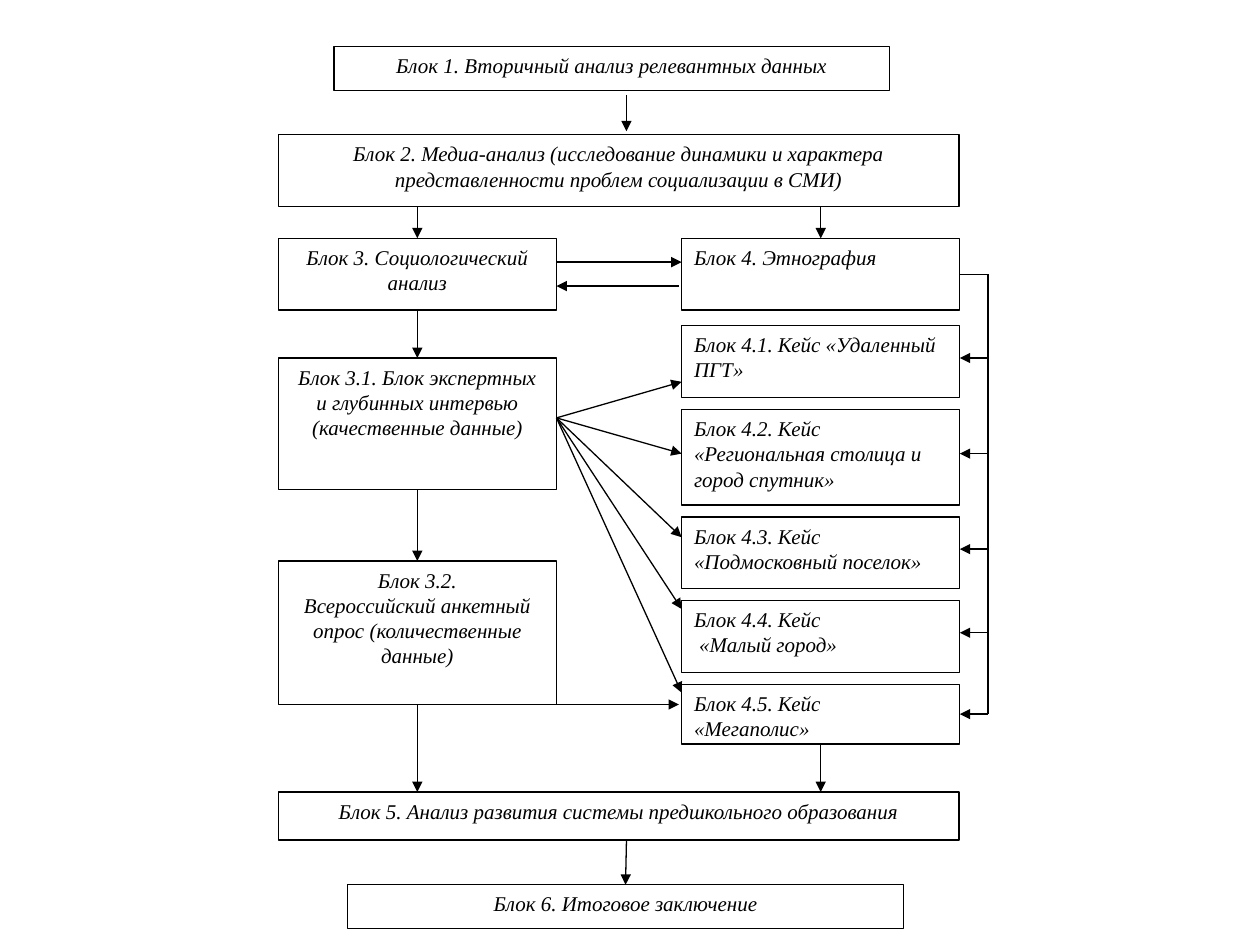
from lxml import etree
from pptx import Presentation
from pptx import util as u
from pptx.dml import color
from pptx.enum import shapes, text as t
from pptx.oxml import ns

COLORS = {"ink": "000000", "paper": "FFFFFF"}
FONT = "Times New Roman"
LEFT, RIGHT, COLUMN, FULL = 159, 389.5, 159, 389
EDGE, BUS = RIGHT + COLUMN, 564.5
LEFT_MID, RIGHT_MID, CENTER = LEFT + COLUMN / 2, RIGHT + COLUMN / 2, 358
TOP_SIDE, LEFT_SIDE, BOTTOM_SIDE, RIGHT_SIDE = range(4)

BLOCKS = {
    "1": ("Блок 1. Вторичный анализ релевантных данных", 190.8, 26.6, 317.5, 25.2),
    "2": ("Блок 2. Медиа-анализ (исследование динамики и характера "
          "представленности проблем социализации в СМИ)", LEFT, 77, FULL, 41),
    "3": ("Блок 3. Социологический анализ", LEFT, 136.2, COLUMN, 41),
    "3.1": ("Блок 3.1. Блок экспертных и глубинных интервью (качественные данные)",
            LEFT, 204.6, COLUMN, 75),
    "3.2": ("Блок 3.2.\nВсероссийский анкетный опрос (количественные данные)",
            LEFT, 320.6, COLUMN, 82),
    "4": ("Блок 4. Этнография", RIGHT, 136.2, COLUMN, 41),
    "4.1": ("Блок 4.1. Кейс «Удаленный ПГТ»", RIGHT, 186, COLUMN, 41),
    "4.2": ("Блок 4.2. Кейс «Региональная столица и город спутник»",
            RIGHT, 234, COLUMN, 54.6),
    "4.3": ("Блок 4.3. Кейс «Подмосковный поселок»", RIGHT, 295.4, COLUMN, 41),
    "4.4": ("Блок 4.4. Кейс\n «Малый город»", RIGHT, 343.2, COLUMN, 41),
    "4.5": ("Блок 4.5. Кейс\n«Мегаполис»", RIGHT, 391, COLUMN, 34.2),
    "5": ("Блок 5. Анализ развития системы предшкольного образования",
          LEFT, 452.6, FULL, 27.4),
    "6": ("Блок 6. Итоговое заключение", 198.7, 505.6, 317.5, 25.2),
}

FAN_START = (LEFT + COLUMN, 238.8)
FAN_ENDS = [218.2, 259.2, 307, 348, 395.8]
BUS_ARROWS = [204.6, 259.2, 313.8, 361.6]
ARROWS = [
    ((CENTER, 54.2), (CENTER, 75)),
    ((LEFT_MID, 118), ("3", TOP_SIDE)),
    ((RIGHT_MID, 118), ("4", TOP_SIDE)),
    (("3", BOTTOM_SIDE), ("3.1", TOP_SIDE)),
    (("3.1", BOTTOM_SIDE), ("3.2", TOP_SIDE)),
    (("3.2", BOTTOM_SIDE), (LEFT_MID, 452.6)),
    (("4.5", BOTTOM_SIDE), (RIGHT_MID, 452.6)),
    ((CENTER, 480), ("6", TOP_SIDE)),
    ((LEFT + COLUMN, 149.8), (RIGHT, 149.8)),
    ((388, 163.5), (LEFT + COLUMN, 163.5)),
    ((316.2, 402.6), (388, 402.6)),
    ((BUS, 408.1), ("4.5", RIGHT_SIDE)),
]
ARROWS += [(FAN_START, (RIGHT, y)) for y in FAN_ENDS]
ARROWS += [((BUS, y), (EDGE, y)) for y in BUS_ARROWS]
PLAIN_LINES = [
    ((BUS, 156.7), (BUS, 408.1)),
    (("4", RIGHT_SIDE), (BUS, 156.7)),
]


def rgb(name):
    return color.RGBColor.from_string(COLORS[name])


def write_text(box, content, *, size=12, align=t.PP_ALIGN.CENTER, ink="ink"):
    frame = box.text_frame
    frame.word_wrap = True
    frame.vertical_anchor = t.MSO_ANCHOR.TOP
    for index, line in enumerate(content.split("\n")):
        para = frame.add_paragraph() if index else frame.paragraphs[0]
        para.alignment = align
        span = para.add_run()
        span.text = line
        span.font.name = FONT
        span.font.size = u.Pt(size)
        span.font.italic = True
        span.font.color.rgb = rgb(ink)


def add_block(page, name):
    content, *place = BLOCKS[name]
    box = page.shapes.add_shape(shapes.MSO_SHAPE.RECTANGLE, *map(u.Pt, place))
    box.shadow.inherit = False
    box.fill.solid()
    box.fill.fore_color.rgb = rgb("paper")
    box.line.color.rgb = rgb("ink")
    box.line.width = u.Pt(0.75)
    align = t.PP_ALIGN.LEFT if name.startswith("4") else t.PP_ALIGN.CENTER
    write_text(box, content, align=align)
    return box


def add_line(page, boxes, start, end, arrow=True):
    line = page.shapes.add_connector(shapes.MSO_CONNECTOR.STRAIGHT, 0, 0, 0, 0)
    if start[0] in boxes:
        line.begin_connect(boxes[start[0]], start[1])
    else:
        line.begin_x, line.begin_y = map(u.Pt, start)
    if end[0] in boxes:
        line.end_connect(boxes[end[0]], end[1])
    else:
        line.end_x, line.end_y = map(u.Pt, end)
    line.line.color.rgb = rgb("ink")
    line.line.width = u.Pt(0.75)
    properties = line.element.spPr
    if arrow:
        outline = properties.find(ns.qn("a:ln"))
        etree.SubElement(outline, ns.qn("a:tailEnd"), type="triangle")
    etree.SubElement(properties, ns.qn("a:effectLst"))


def main():
    deck = Presentation()
    deck.slide_width, deck.slide_height = u.Pt(720), u.Pt(540)
    page = deck.slides.add_slide(deck.slide_layouts[6])
    boxes = {name: add_block(page, name) for name in BLOCKS}
    for start, end in PLAIN_LINES:
        add_line(page, boxes, start, end, arrow=False)
    for start, end in ARROWS:
        add_line(page, boxes, start, end)
    deck.save("out.pptx")


if __name__ == "__main__":
    main()
